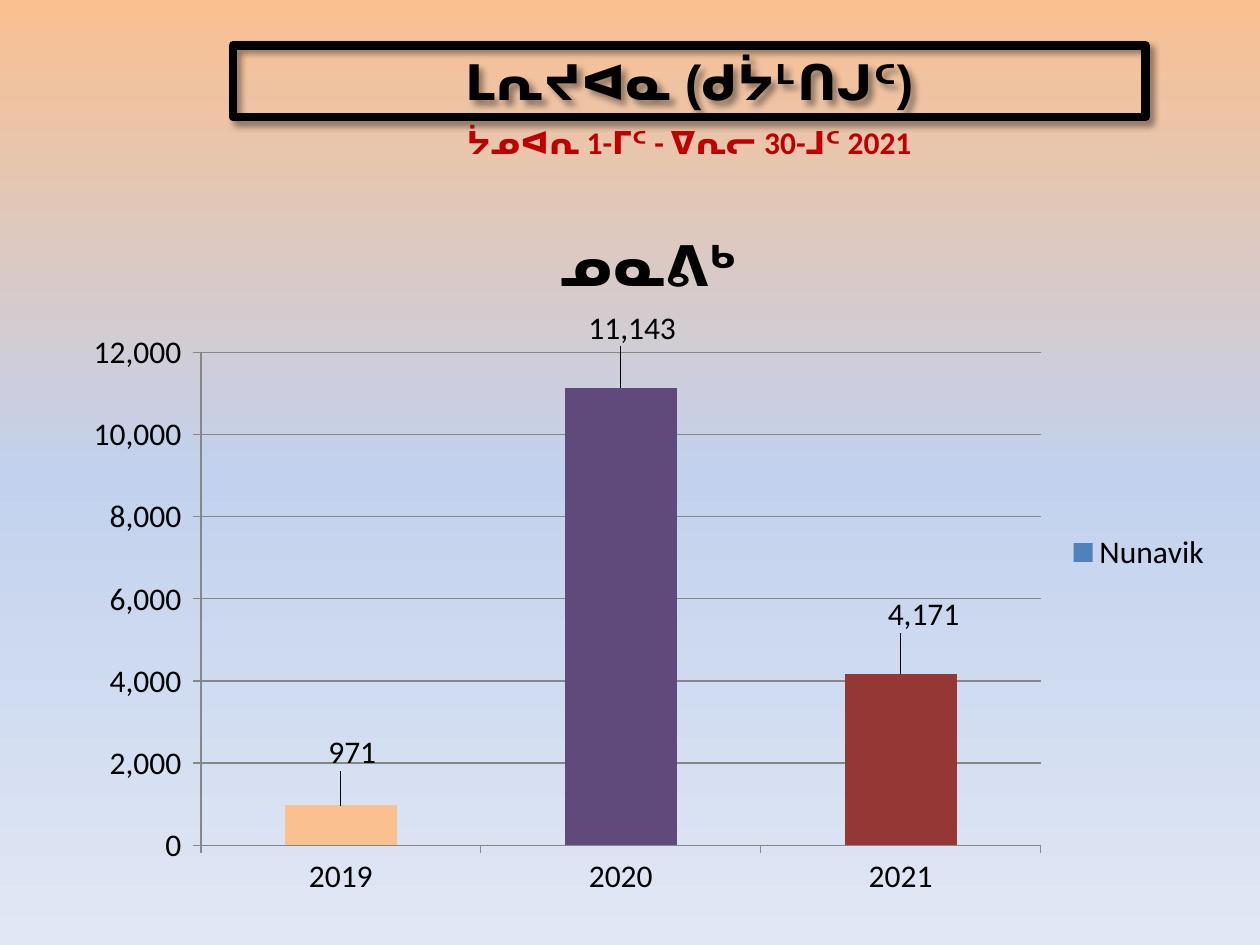
from copy import deepcopy

from lxml import etree
from pptx import Presentation
from pptx.chart.data import CategoryChartData
from pptx.dml.color import RGBColor
from pptx.enum.chart import XL_CHART_TYPE as ChartType
from pptx.enum.chart import XL_LABEL_POSITION as LabelPosition
from pptx.enum.chart import XL_LEGEND_POSITION as LegendPosition
from pptx.enum.chart import XL_TICK_MARK as TickMark
from pptx.enum.text import MSO_ANCHOR as Anchor
from pptx.enum.text import PP_ALIGN as Align
from pptx.oxml import parse_xml
from pptx.oxml.ns import nsdecls, qn
from pptx.util import Inches, Pt

COLORS = {
    "black": "000000", "date": "C00000", "grid": "878787", "series": "4F81BD",
    "sky_top": "FAC090", "sky_middle": "C2D1ED", "sky_bottom": "E1E8F5",
    "2019": "FAC090", "2020": "604A7B", "2021": "953735",
}
SEIZED = {"2019": 971, "2020": 11143, "2021": 4171}
LABEL_OFFSETS = [(0.01, -0.04), (0.01, -0.05), (0.02, -0.05)]
CHART_TEXT = {"name": "Calibri", "size": Pt(18), "bold": False}


def rgb(name):
    return RGBColor.from_string(COLORS[name])


def format_font(font, color, values):
    for attribute, value in values.items():
        setattr(font, attribute, value)
    font.color.rgb = rgb(color)


def paint_background(slide):
    fill = slide.background.fill
    fill.gradient()
    fill.gradient_angle = 270
    first_stop = fill._fill._gradFill.gsLst[0]
    first_stop.addnext(deepcopy(first_stop))
    sky = [(0, "sky_top"), (0.5, "sky_middle"), (1, "sky_bottom")]
    for stop, (position, color) in zip(fill.gradient_stops, sky):
        stop.position = position
        stop.color.rgb = rgb(color)


def add_shadow(properties):
    properties.append(parse_xml(
        f'<a:effectLst {nsdecls("a")}><a:outerShdw blurRad="{Pt(4)}" dist="{Pt(3)}" '
        'dir="2700000" algn="tl" rotWithShape="0"><a:srgbClr val="000000">'
        '<a:alpha val="40000"/></a:srgbClr></a:outerShdw></a:effectLst>'))


def write_line(box, text, color, font_values):
    frame = box.text_frame
    frame.word_wrap = True
    frame.vertical_anchor = Anchor.MIDDLE
    frame.margin_top = frame.margin_bottom = Inches(0.05)
    paragraph = frame.paragraphs[0]
    paragraph.alignment = Align.CENTER
    run = paragraph.add_run()
    run.text = text
    format_font(run.font, color, font_values)
    return run


def add_heading(slide, left, top, width):
    """Framed title with the period right below it."""
    title_height = Inches(0.57)
    title = slide.shapes.title
    frame = {"left": left, "top": top, "width": width, "height": title_height}
    for attribute, value in frame.items():
        setattr(title, attribute, value)
    title.line.color.rgb = rgb("black")
    title.line.width = Pt(5)
    add_shadow(title._element.spPr)
    write_line(title, "ᒪᕆᔪᐊᓇ (ᑯᔮᒻᑎᒍᑦ)", "black",
               {"name": "Arial", "size": Pt(28), "bold": True})

    period = slide.shapes.add_textbox(left, top + title_height, width, Inches(0.4))
    run = write_line(period, "ᔮᓄᐊᕆ 1-ᒥᑦ - ᐁᕆᓕ 30-ᒧᑦ 2021", "date",
                     {"name": "Calibri", "size": Pt(18), "bold": True})
    properties = run.font._element
    add_shadow(properties)
    properties.find(qn("a:solidFill")).addnext(properties[-1])


def manual_layout(**values):
    layout = etree.Element(qn("c:layout"))
    manual = etree.SubElement(layout, qn("c:manualLayout"))
    for tag, value in values.items():
        etree.SubElement(manual, qn(f"c:{tag}"), val=str(value))
    return layout


def style_axes(chart):
    for axis in (chart.category_axis, chart.value_axis):
        axis.major_tick_mark = TickMark.OUTSIDE
        axis.minor_tick_mark = TickMark.NONE
        axis.format.line.color.rgb = rgb("grid")
        format_font(axis.tick_labels.font, "black", CHART_TEXT)
    values = chart.value_axis
    scale = {"minimum_scale": 0, "maximum_scale": 12000, "major_unit": 2000}
    for attribute, value in scale.items():
        setattr(values, attribute, value)
    values.major_gridlines.format.line.color.rgb = rgb("grid")
    values.tick_labels.number_format = "#,##0_);\\(#,##0\\)"
    values.tick_labels.number_format_is_linked = False


def style_bars(plot):
    plot.gap_width = 150
    plot.vary_by_categories = False
    series = plot.series[0]
    series.format.fill.solid()
    series.format.fill.fore_color.rgb = rgb("series")
    for index, year in enumerate(SEIZED):
        point = series.points[index]
        point.format.fill.solid()
        point.format.fill.fore_color.rgb = rgb(year)
        format_font(point.data_label.font, "black", CHART_TEXT)
        point.data_label.position = LabelPosition.OUTSIDE_END
    labels = series._element.iter(qn("c:dLbl"))
    for label, (x, y) in zip(labels, LABEL_OFFSETS):
        label.find(qn("c:idx")).addnext(manual_layout(x=x, y=y))


def add_seizure_chart(slide, left, top, width, height):
    data = CategoryChartData(number_format="#,##0")
    data.categories = list(SEIZED)
    data.add_series("Nunavik", list(SEIZED.values()))
    chart = slide.shapes.add_chart(
        ChartType.COLUMN_CLUSTERED, left, top, width, height, data).chart
    format_font(chart.font, "black", CHART_TEXT)

    title = chart.chart_title.text_frame
    title.text = "ᓄᓇᕕᒃ"
    format_font(title.paragraphs[0].runs[0].font, "black",
                {"name": "Calibri", "size": Pt(32), "bold": True})
    chart.has_legend = True
    chart.legend.position = LegendPosition.RIGHT
    chart.legend.include_in_layout = False
    format_font(chart.legend.font, "black", CHART_TEXT)

    style_axes(chart)
    style_bars(chart.plots[0])
    plot_area = chart._chartSpace.chart.plotArea
    for layout in plot_area.findall(qn("c:layout")):
        plot_area.remove(layout)
    plot_area.insert(0, manual_layout(
        layoutTarget="inner", xMode="edge", yMode="edge",
        x=0.11, y=0.22, w=0.73, h=0.69))


def main():
    presentation = Presentation()
    presentation.slide_width, presentation.slide_height = Inches(10), Inches(7.5)
    slide = presentation.slides.add_slide(presentation.slide_layouts[5])
    paint_background(slide)
    add_seizure_chart(slide, Inches(0.59), Inches(1.55), Inches(9.13), Inches(5.67))
    add_heading(slide, Inches(1.85), Inches(0.36), Inches(7.24))
    presentation.save("out.pptx")


if __name__ == "__main__":
    main()
